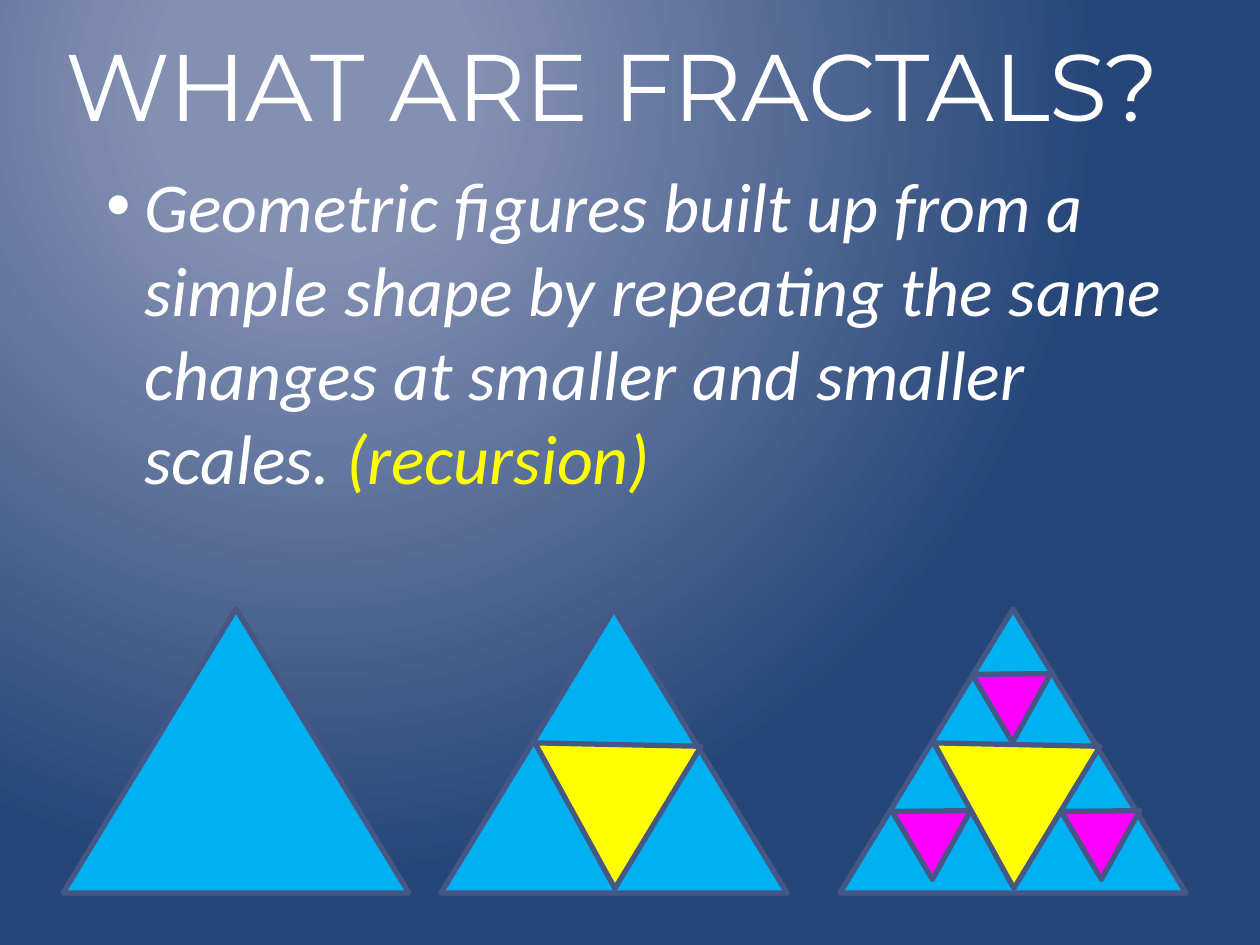
from lxml import etree
from pptx import Presentation
from pptx import util as u
from pptx.dml.color import RGBColor
from pptx.enum import shapes, text
from pptx.oxml import parse_xml
from pptx.oxml.ns import nsdecls, qn

PX = 914400 / 126
COLORS = {
    "glow": "8390B2", "night": "264679", "white": "FFFFFF", "outline": "475785",
    "blue": "00B0F0", "yellow": "FFFF00", "magenta": "FF00FF",
}
TRIANGLE_SIZE = (346, 284)
# Inverted triangles of each step: left, top, width, height, rotation, colour
STEP_ONE = [(114, 100, 166, 144, 61.2, "yellow")]
STEP_TWO = [(left, top, 79, 68, 59.3, "magenta")
            for left, top in [(142, 48), (62, 185), (231, 185)]]


def px(value):
    return u.Emu(round(value * PX))


def rgb(name):
    return RGBColor.from_string(COLORS[name])


def add_run(paragraph, words, font, size, color, italic=None):
    run = paragraph.add_run()
    run.text = words
    run.font.name = font
    run.font.size = u.Pt(size)
    run.font.italic = italic
    run.font.color.rgb = rgb(color)


def paint_background(slide):
    """Fill the slide with a circular gradient lit from the upper left."""
    slide.background.fill.solid()
    solid = slide.background._cSld.find(".//" + qn("a:solidFill"))
    gradient = parse_xml(
        f'<a:gradFill {nsdecls("a")} rotWithShape="1"><a:gsLst>'
        f'<a:gs pos="20000"><a:srgbClr val="{COLORS["glow"]}"/></a:gs>'
        f'<a:gs pos="100000"><a:srgbClr val="{COLORS["night"]}"/></a:gs>'
        '</a:gsLst><a:path path="circle">'
        '<a:fillToRect l="50000" t="20000" r="100000" b="100000"/>'
        '</a:path></a:gradFill>')
    solid.getparent().replace(solid, gradient)


def place_title(slide, left, top, width, height):
    title = slide.shapes.title
    title.left, title.top, title.width, title.height = map(
        px, (left, top, width, height))
    frame = title.text_frame
    frame.word_wrap = True
    frame.auto_size = text.MSO_AUTO_SIZE.NONE
    frame.vertical_anchor = text.MSO_ANCHOR.TOP
    paragraph = frame.paragraphs[0]
    paragraph.alignment = text.PP_ALIGN.LEFT
    add_run(paragraph, "WHAT ARE FRACTALS?", "Montserrat", 54, "white")


def add_definition(slide, left, top, width, height):
    definition = slide.shapes.add_textbox(*map(px, (left, top, width, height)))
    frame = definition.text_frame
    frame.word_wrap = True
    paragraph = frame.paragraphs[0]
    paragraph.space_before = u.Pt(8)
    properties = paragraph._p.get_or_add_pPr()
    indent = px(38)
    properties.set("marL", str(indent))
    properties.set("indent", str(-indent))
    etree.SubElement(properties, qn("a:buFont")).set("typeface", "Arial")
    etree.SubElement(properties, qn("a:buChar")).set("char", "•")
    add_run(paragraph,
            "Geometric figures built up from a simple shape by repeating "
            "the same changes at smaller and smaller scales. ",
            "Calibri", 40, "white", italic=True)
    add_run(paragraph, "(recursion)", "Calibri", 40, "yellow", italic=True)


def add_triangle(parent, left, top, width, height, rotation, color):
    triangle = parent.add_shape(shapes.MSO_SHAPE.ISOSCELES_TRIANGLE,
                                *map(px, (left, top, width, height)))
    triangle.rotation = rotation
    triangle.shadow.inherit = False
    triangle.fill.solid()
    triangle.fill.fore_color.rgb = rgb(color)
    triangle.line.color.rgb = rgb("outline")
    triangle.line.width = u.Pt(3)


def add_fractal(slide, left, top, inverted):
    """Draw one stage: a blue triangle with inverted ones inside it."""
    parent = slide.shapes.add_group_shape().shapes if inverted else slide.shapes
    add_triangle(parent, left, top, *TRIANGLE_SIZE, 0, "blue")
    for x, y, *look in inverted:
        add_triangle(parent, left + x, top + y, *look)


def main():
    prs = Presentation()
    prs.slide_width, prs.slide_height = px(1260), px(945)
    slide = prs.slides.add_slide(prs.slide_layouts[5])
    paint_background(slide)
    place_title(slide, 53, 21, 1244, 272)
    add_definition(slide, 94, 156, 1134, 624)
    stages = [(63, []), (441, STEP_ONE), (840, STEP_ONE + STEP_TWO)]
    for left, inverted in stages:
        add_fractal(slide, left, 609, inverted)
    prs.save("out.pptx")


if __name__ == "__main__":
    main()
